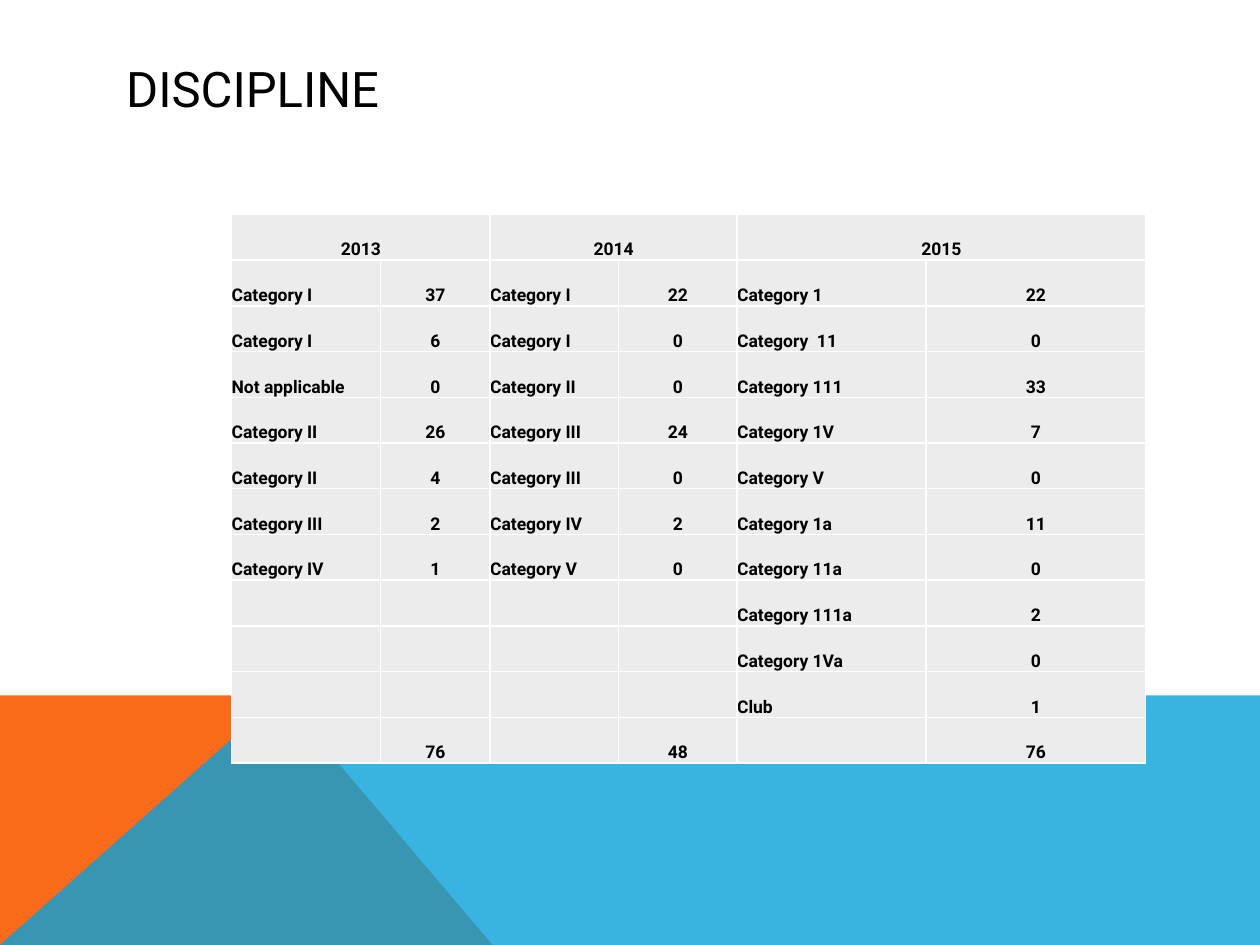
from dataclasses import dataclass

from lxml import etree
from pptx import Presentation
from pptx.dml.color import RGBColor
from pptx.enum.text import MSO_ANCHOR, PP_ALIGN
from pptx.oxml.ns import qn
from pptx.util import Cm, Pt

LEFT, CENTER = PP_ALIGN.LEFT, PP_ALIGN.CENTER
MIDDLE, BOTTOM = MSO_ANCHOR.MIDDLE, MSO_ANCHOR.BOTTOM
TITLE_ONLY = 5


@dataclass(frozen=True)
class Theme:
    font: str = "Roboto"
    text: str = "000000"
    orange: str = "F96A1B"
    blue: str = "08A1D9"
    cell: str = "ECECEC"
    border: str = "FFFFFF"
    title_size: float = 28
    cell_size: float = 10
    border_width: float = 1


@dataclass(frozen=True)
class Band:
    """A flat background polygon, with points in centimetres."""
    points: tuple[tuple[float, float], ...]
    color: str
    opacity: int = 100


@dataclass(frozen=True)
class Year:
    """One pair of table columns: category names and counts."""
    label: str
    widths: tuple[float, float]
    entries: tuple[tuple[str, int], ...]
    total: int


THEME = Theme()
WIDTH, HEIGHT = 25.4, 19.05
BAND_TOP, PEAK_X = 14.02, 5.66

BANDS = (
    Band(((0, HEIGHT), (0, BAND_TOP), (PEAK_X, BAND_TOP), (9.93, HEIGHT)),
         THEME.orange),
    Band(((0, HEIGHT), (PEAK_X, BAND_TOP), (WIDTH, BAND_TOP), (WIDTH, HEIGHT)),
         THEME.blue, 80),
)

YEARS = (
    Year("2013", (3.0, 2.21), (
        ("Category I", 37), ("Category I", 6), ("Not applicable", 0),
        ("Category II", 26), ("Category II", 4), ("Category III", 2),
        ("Category IV", 1)), 76),
    Year("2014", (2.59, 2.39), (
        ("Category I", 22), ("Category I", 0), ("Category II", 0),
        ("Category III", 24), ("Category III", 0), ("Category IV", 2),
        ("Category V", 0)), 48),
    Year("2015", (3.81, 4.42), (
        ("Category 1", 22), ("Category  11", 0), ("Category 111", 33),
        ("Category 1V", 7), ("Category V", 0), ("Category 1a", 11),
        ("Category 11a", 0), ("Category 111a", 2), ("Category 1Va", 0),
        ("Club", 1)), 76),
)


def set_attrs(obj, values: dict) -> None:
    for name, value in values.items():
        setattr(obj, name, value)


def write(tf, text: str, size: float, bold: bool, align) -> None:
    p = tf.paragraphs[0]
    p.alignment = align
    r = p.add_run()
    r.text = text
    set_attrs(r.font, {"name": THEME.font, "size": Pt(size), "bold": bold})
    r.font.color.rgb = RGBColor.from_string(THEME.text)


def draw_band(s, band: Band) -> None:
    start, *rest = [(Cm(x), Cm(y)) for x, y in band.points]
    builder = s.shapes.build_freeform(*start)
    builder.add_line_segments(rest, close=True)
    sp = builder.convert_to_shape()
    sp.shadow.inherit = False
    sp.line.fill.background()
    sp.fill.solid()
    sp.fill.fore_color.rgb = RGBColor.from_string(band.color)
    if band.opacity < 100:
        color = sp.element.spPr.find(qn("a:solidFill"))[0]
        etree.SubElement(color, qn("a:alpha"), val=str(band.opacity * 1000))


def draw_title(s, text: str) -> None:
    sp = s.shapes.title
    set_attrs(sp, {"left": Cm(2.29), "top": Cm(1.02),
                   "width": Cm(20.88), "height": Cm(1.52)})
    set_attrs(sp.text_frame, {"vertical_anchor": MIDDLE, "word_wrap": True})
    write(sp.text_frame, text, THEME.title_size, False, LEFT)
    s.shapes.element.append(sp.element)  # in front of the bands


def format_cell(cell) -> None:
    set_attrs(cell, {"margin_left": 0, "margin_right": 0, "margin_top": 0,
                     "margin_bottom": 0, "vertical_anchor": BOTTOM})
    tc_pr = cell._tc.get_or_add_tcPr()
    for side in ("lnL", "lnR", "lnT", "lnB"):
        ln = etree.SubElement(tc_pr, qn(f"a:{side}"),
                              w=str(Pt(THEME.border_width)))
        fill = etree.SubElement(ln, qn("a:solidFill"))
        etree.SubElement(fill, qn("a:srgbClr"), val=THEME.border)
    cell.fill.solid()
    cell.fill.fore_color.rgb = RGBColor.from_string(THEME.cell)


def fill_year(table, col: int, year: Year) -> None:
    last = len(table.rows) - 1

    def put(row: int, offset: int, text: str, align) -> None:
        tf = table.cell(row, col + offset).text_frame
        write(tf, text, THEME.cell_size, True, align)

    table.cell(0, col).merge(table.cell(0, col + 1))
    put(0, 0, year.label, CENTER)
    for row, (name, count) in enumerate(year.entries, start=1):
        put(row, 0, name, LEFT)
        put(row, 1, str(count), CENTER)
    put(last, 1, str(year.total), CENTER)


def draw_table(s, years: tuple[Year, ...]) -> None:
    widths = [Cm(w) for year in years for w in year.widths]
    n_rows = max(len(year.entries) for year in years) + 2  # header and total
    frame = s.shapes.add_table(n_rows, len(widths), Cm(4.67), Cm(4.32),
                               sum(widths), Cm(11.07))
    table = frame.table
    set_attrs(table, {"first_row": False, "horz_banding": False})
    for column, width in zip(table.columns, widths):
        column.width = width
    for cell in table.iter_cells():
        format_cell(cell)
    for i, year in enumerate(years):
        fill_year(table, 2 * i, year)


def main() -> None:
    prs = Presentation()
    set_attrs(prs, {"slide_width": Cm(WIDTH), "slide_height": Cm(HEIGHT)})
    s = prs.slides.add_slide(prs.slide_layouts[TITLE_ONLY])

    # Background bands
    for band in BANDS:
        draw_band(s, band)

    # Title and yearly counts
    draw_title(s, "DISCIPLINE")
    draw_table(s, YEARS)

    prs.save("out.pptx")


if __name__ == "__main__":
    main()
